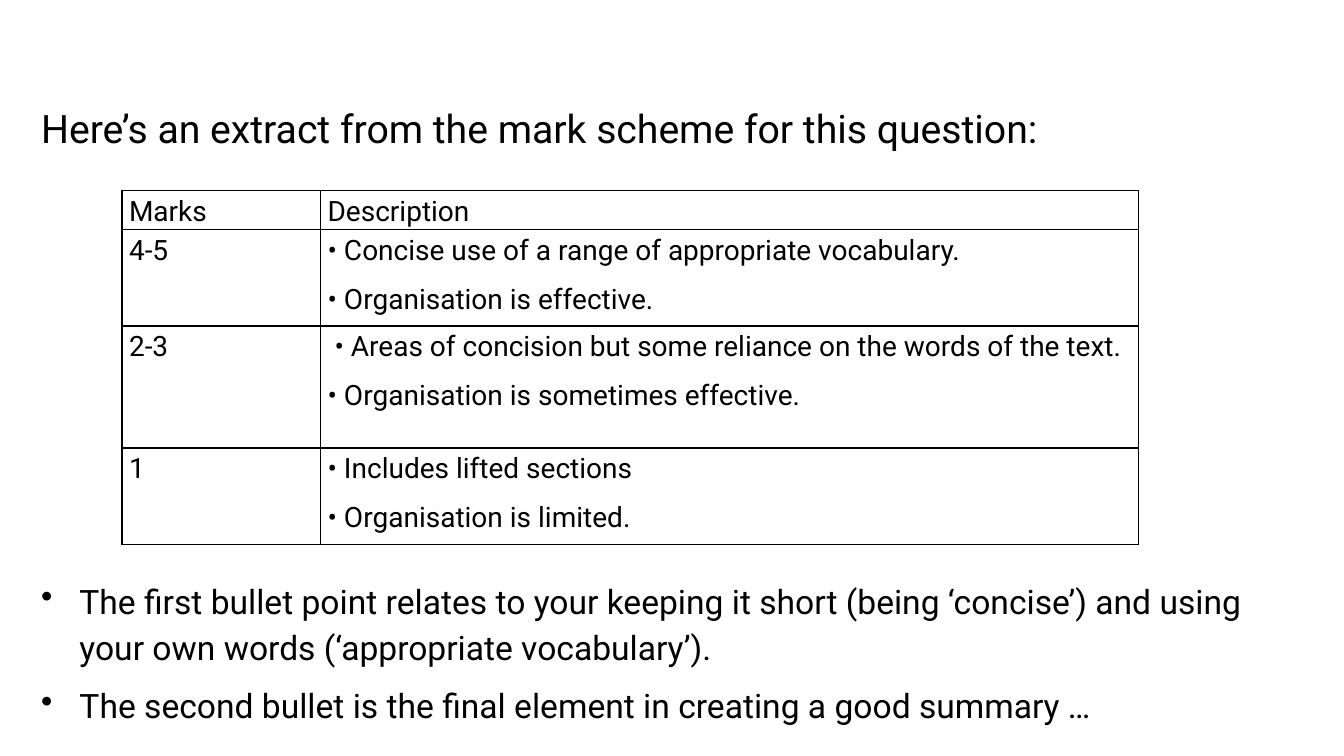
from dataclasses import dataclass

import pptx
import pptx.dml.color
import pptx.enum.text
import pptx.oxml
import pptx.oxml.ns
import pptx.util

Inches = pptx.util.Inches
Pt = pptx.util.Pt
Anchor = pptx.enum.text.MSO_ANCHOR

FONT = "Roboto"
COLORS = {"ink": "000000"}
COLS = [1.97, 8.11]
ROWS = [0.3, 0.96, 1.21, 0.96]
INDENT = 0.38


@dataclass
class Note:
    left: float
    top: float
    width: float
    height: float
    text: str
    size: int
    after: int = 8
    bullet: bool = True
    anchor: Anchor = Anchor.TOP


@dataclass
class Band:
    marks: str
    points: list[str]


TITLE = Note(0.31, 0.84, 12.72, 0.79, "Here’s an extract from the mark scheme for this question:",
             28, bullet=False, anchor=Anchor.MIDDLE)
NOTES = [
    Note(0.31, 5.65, 12.6, 1.01,
         "The first bullet point relates to your keeping it short (being ‘concise’) "
         "and using your own words (‘appropriate vocabulary’).", 24, after=0),
    Note(0.31, 6.69, 11.38, 0.54,
         "The second bullet is the final element in creating a good summary …", 24),
]
BANDS = [
    Band("Marks", ["Description"]),
    Band("4-5", ["• Concise use of a range of appropriate vocabulary.",
                 "• Organisation is effective."]),
    Band("2-3", [" • Areas of concision but some reliance on the words of the text.",
                 "• Organisation is sometimes effective."]),
    Band("1", ["• Includes lifted sections", "• Organisation is limited."]),
]


def write(para, text: str, size: int, after: int = 8) -> None:
    para.line_spacing = 1.15
    para.space_after = Pt(after)
    run = para.add_run()
    run.text = text
    run.font.name = FONT
    run.font.size = Pt(size)
    run.font.color.rgb = pptx.dml.color.RGBColor.from_string(COLORS["ink"])


def add_mark(para) -> None:
    """Give the paragraph a bullet with a hanging indent."""
    props = para._p.get_or_add_pPr()
    props.set("marL", str(Inches(INDENT)))
    props.set("indent", str(-Inches(INDENT)))
    props.append(pptx.oxml.parse_xml(
        f'<a:buChar {pptx.oxml.ns.nsdecls("a")} char="•"/>'))


def add_note(slide, note: Note) -> None:
    box = slide.shapes.add_textbox(Inches(note.left), Inches(note.top),
                                   Inches(note.width), Inches(note.height))
    frame = box.text_frame
    frame.word_wrap = True
    frame.vertical_anchor = note.anchor
    para = frame.paragraphs[0]
    if note.bullet:
        add_mark(para)
    write(para, note.text, note.size, note.after)


def add_rules(cell) -> None:
    """Draw a thin line on all four sides of a cell."""
    props = cell._tc.get_or_add_tcPr()
    for spot, side in enumerate("LRTB"):
        props.insert(spot, pptx.oxml.parse_xml(
            f'<a:ln{side} {pptx.oxml.ns.nsdecls("a")} w="{Pt(1)}"><a:solidFill>'
            f'<a:srgbClr val="{COLORS["ink"]}"/></a:solidFill></a:ln{side}>'))


def fill_cell(cell, lines: list[str]) -> None:
    cell.margin_left = cell.margin_right = Inches(0.07)
    cell.margin_top = cell.margin_bottom = 0
    cell.fill.background()
    add_rules(cell)
    frame = cell.text_frame
    for spot, line in enumerate(lines):
        write(frame.add_paragraph() if spot else frame.paragraphs[0], line, 20)


def add_scheme(slide) -> None:
    table = slide.shapes.add_table(len(ROWS), len(COLS), Inches(1.21), Inches(1.89),
                                   Inches(sum(COLS)), Inches(sum(ROWS))).table
    table.first_row = table.horz_banding = False
    for col, width in zip(table.columns, COLS):
        col.width = Inches(width)
    for row, height, band in zip(table.rows, ROWS, BANDS):
        row.height = Inches(height)
        fill_cell(row.cells[0], [band.marks])
        fill_cell(row.cells[1], band.points)


def main() -> None:
    deck = pptx.Presentation()
    deck.slide_width, deck.slide_height = Inches(13.33), Inches(7.5)
    slide = deck.slides.add_slide(deck.slide_layouts[6])
    add_note(slide, TITLE)
    add_scheme(slide)
    for note in NOTES:
        add_note(slide, note)
    deck.save("out.pptx")


if __name__ == "__main__":
    main()
